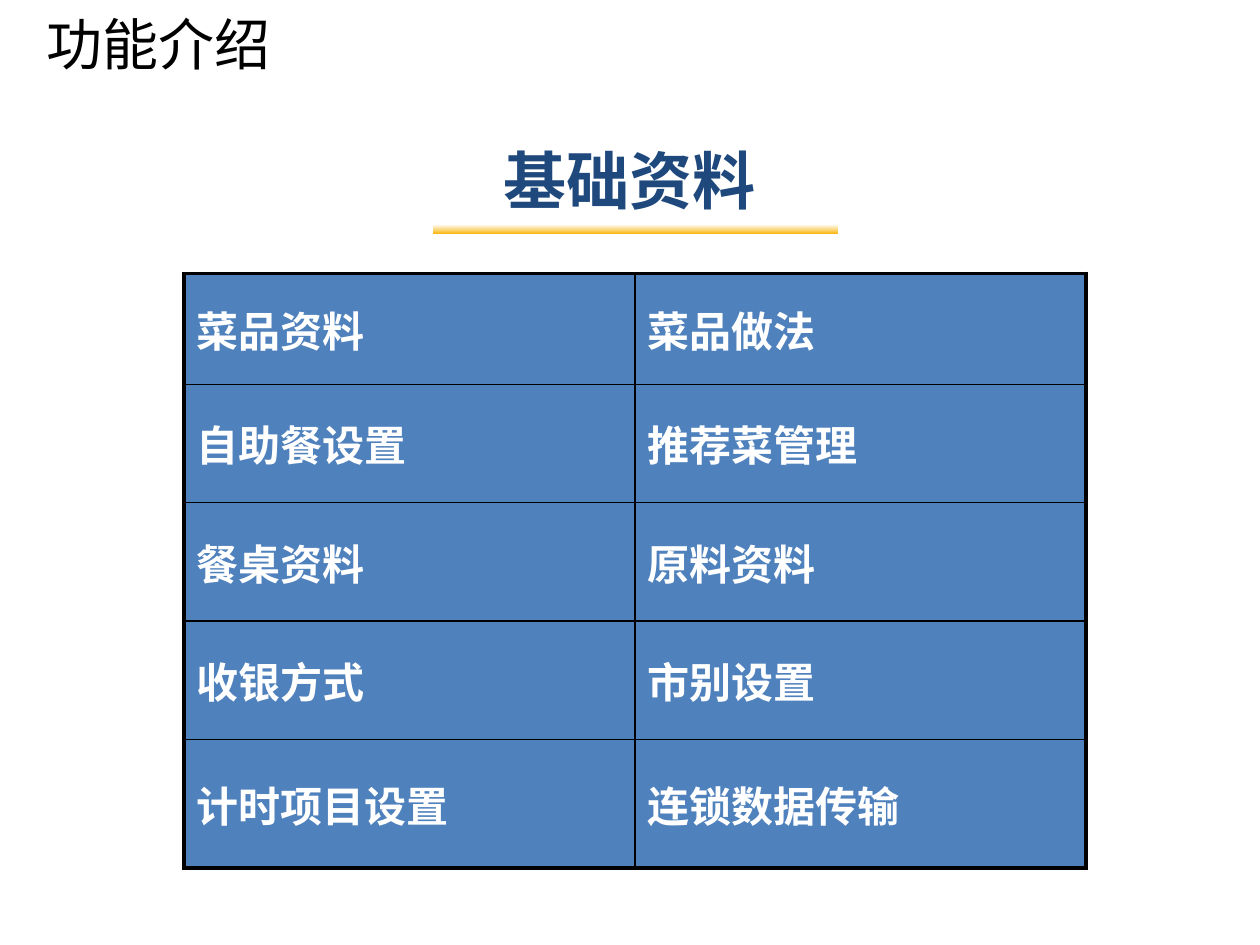
from dataclasses import dataclass

import pptx
import pptx.dml.color
import pptx.enum.shapes
import pptx.enum.text
import pptx.oxml
import pptx.oxml.ns
import pptx.util
from pptx.util import Inches

COLORS = {
    "black": "000000",
    "white": "FFFFFF",
    "cell": "4F81BD",
    "heading": "1F497D",
    "gold": "F9B407",
}
FEATURES = [
    ("菜品资料", "菜品做法"),
    ("自助餐设置", "推荐菜管理"),
    ("餐桌资料", "原料资料"),
    ("收银方式", "市别设置"),
    ("计时项目设置", "连锁数据传输"),
]
COLUMN_WIDTH = 3.58
ROW_HEIGHTS = [0.88, 0.94, 0.94, 0.94, 1.02]
OUTER_BORDER, INNER_BORDER = 2.25, 1


@dataclass
class TextStyle:
    size: float
    font: str
    color: str
    bold: bool = False
    align: pptx.enum.text.PP_ALIGN = pptx.enum.text.PP_ALIGN.LEFT


TITLE = TextStyle(32, "Calibri", "black")
HEADING = TextStyle(36, "Calibri", "heading", True, pptx.enum.text.PP_ALIGN.CENTER)
CELL = TextStyle(24, "Arial", "white", True)


def rgb(name: str) -> pptx.dml.color.RGBColor:
    return pptx.dml.color.RGBColor.from_string(COLORS[name])


def write(text_frame, text: str, style: TextStyle) -> None:
    text_frame.text = text
    text_frame.word_wrap = True
    paragraph = text_frame.paragraphs[0]
    paragraph.alignment = style.align
    for run in paragraph.runs:
        run.font.size = pptx.util.Pt(style.size)
        run.font.name = style.font
        run.font.bold = style.bold
        run.font.color.rgb = rgb(style.color)


def place(shape, left: float, top: float, width: float, height: float) -> None:
    shape.left, shape.top = Inches(left), Inches(top)
    shape.width, shape.height = Inches(width), Inches(height)


def set_borders(cell, widths: dict[str, float]) -> None:
    """Draw the cell edges; they must come before the fill in the XML."""
    properties = cell._tc.get_or_add_tcPr()
    for index, (edge, width) in enumerate(widths.items()):
        border = pptx.oxml.parse_xml(
            f'<a:{edge} {pptx.oxml.ns.nsdecls("a")} w="{pptx.util.Pt(width)}">'
            f'<a:solidFill><a:srgbClr val="{COLORS["black"]}"/></a:solidFill>'
            f"</a:{edge}>"
        )
        properties.insert(index, border)


def add_feature_table(slide, left: float, top: float) -> None:
    row_count, column_count = len(FEATURES), len(FEATURES[0])
    table = slide.shapes.add_table(
        row_count, column_count, Inches(left), Inches(top),
        Inches(COLUMN_WIDTH * column_count), Inches(sum(ROW_HEIGHTS)),
    ).table
    table.first_row = table.horz_banding = False
    for column in table.columns:
        column.width = Inches(COLUMN_WIDTH)
    for row_index, (labels, height) in enumerate(zip(FEATURES, ROW_HEIGHTS)):
        table.rows[row_index].height = Inches(height)
        for column_index, label in enumerate(labels):
            cell = table.cell(row_index, column_index)
            write(cell.text_frame, label, CELL)
            cell.vertical_anchor = pptx.enum.text.MSO_ANCHOR.MIDDLE
            cell.fill.solid()
            cell.fill.fore_color.rgb = rgb("cell")
            on_outside = {
                "lnL": column_index == 0,
                "lnR": column_index == column_count - 1,
                "lnT": row_index == 0,
                "lnB": row_index == row_count - 1,
            }
            set_borders(cell, {
                edge: OUTER_BORDER if outside else INNER_BORDER
                for edge, outside in on_outside.items()
            })


def add_gradient_bar(slide, left: float, top: float, width: float, height: float) -> None:
    bar = slide.shapes.add_shape(
        pptx.enum.shapes.MSO_SHAPE.RECTANGLE,
        Inches(left), Inches(top), Inches(width), Inches(height),
    )
    bar.shadow.inherit = False
    bar.fill.gradient()
    bar.fill.gradient_angle = 270
    for stop, color in zip(bar.fill.gradient_stops, ("white", "gold")):
        stop.color.rgb = rgb(color)
    bar.line.color.rgb = rgb("white")
    bar.line.width = pptx.util.Pt(0.75)


def main() -> None:
    presentation = pptx.Presentation()
    presentation.slide_width, presentation.slide_height = Inches(10), Inches(7.5)
    slide = presentation.slides.add_slide(presentation.slide_layouts[5])

    # Page title
    title = slide.shapes.title
    place(title, 0.27, 0, 9, 0.68)
    write(title.text_frame, "功能介绍", TITLE)
    title.text_frame.vertical_anchor = pptx.enum.text.MSO_ANCHOR.MIDDLE

    # Feature table
    add_feature_table(slide, 1.46, 2.17)

    # Section heading with its underline
    heading = slide.shapes.add_textbox(
        Inches(0.75), Inches(0.9), Inches(8.5), Inches(1.04)
    )
    write(heading.text_frame, "基础资料", HEADING)
    heading.text_frame.vertical_anchor = pptx.enum.text.MSO_ANCHOR.MIDDLE
    add_gradient_bar(slide, 3.43, 1.78, 3.23, 0.08)

    presentation.save("out.pptx")


if __name__ == "__main__":
    main()
